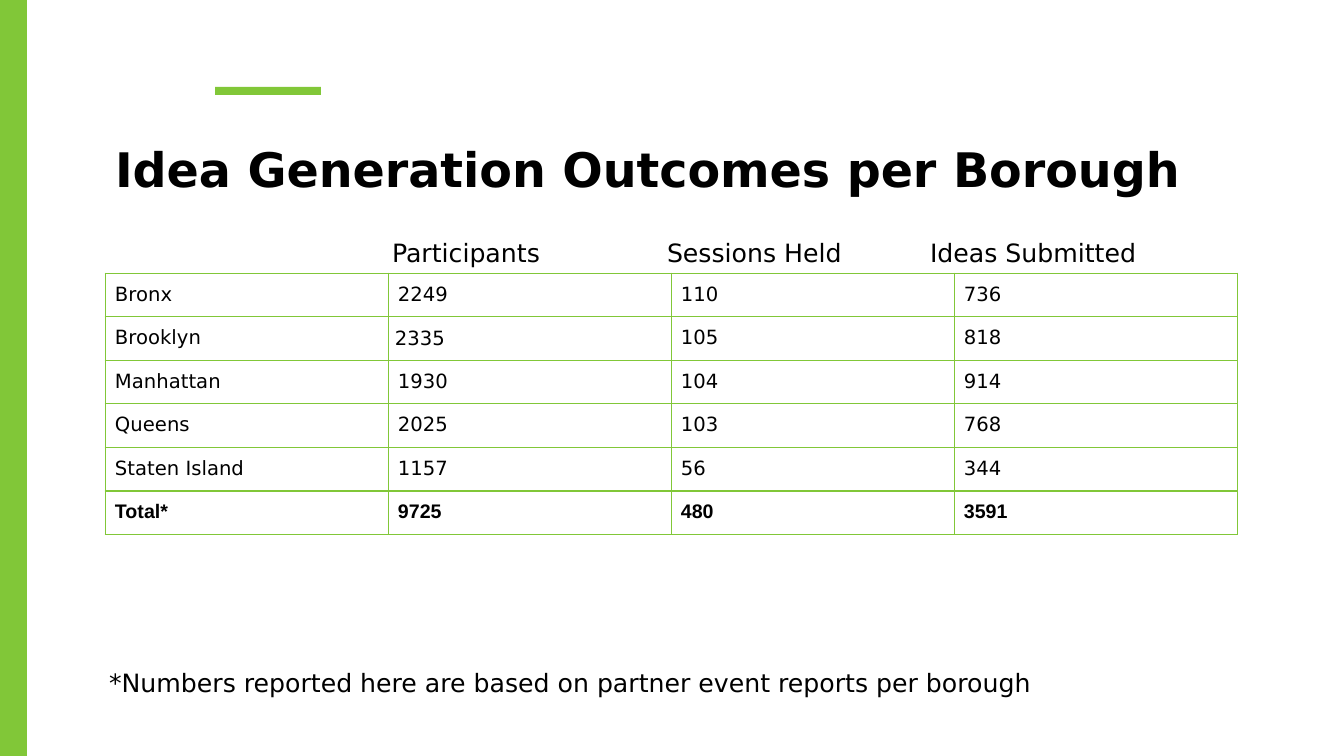
from dataclasses import dataclass

from lxml.etree import SubElement
from pptx import Presentation
from pptx.dml.color import RGBColor
from pptx.enum.shapes import MSO_SHAPE
from pptx.enum.text import MSO_ANCHOR
from pptx.oxml.ns import qn
from pptx.util import Pt

TITLE = "Idea Generation Outcomes per Borough"
HEADINGS = ["Participants", "Sessions Held", "Ideas Submitted"]
BOROUGHS = [
    ("Bronx", 2249, 110, 736),
    ("Brooklyn", 2335, 105, 818),
    ("Manhattan", 1930, 104, 914),
    ("Queens", 2025, 103, 768),
    ("Staten Island", 1157, 56, 344),
]
TOTALS = [("Total*", 9725, 480, 3591)]
FOOTNOTE = "*Numbers reported here are based on partner event reports per borough"


@dataclass(frozen=True)
class Theme:
    green: RGBColor = RGBColor(0x81, 0xC7, 0x38)
    black: RGBColor = RGBColor(0, 0, 0)
    font: str = "DejaVu Sans"
    total_font: str = "Arial"
    title_size: int = 34
    label_size: int = 18
    cell_size: int = 14
    border: float = 0.75


THEME = Theme()
PX_PER_INCH = 100.8
INSET = 10
TABLE_LEFT, COLUMN_WIDTH = 105, 283
HEADING_STOPS = [275, 538]


def px(length):
    return round(length * 914400 / PX_PER_INCH)


def set_margins(holder, left=INSET, top=INSET):
    holder.margin_left, holder.margin_right = px(left), px(INSET)
    holder.margin_top, holder.margin_bottom = px(top), px(INSET)


def add_run(paragraph, text, size, font=THEME.font, bold=False):
    run = paragraph.add_run()
    run.text = text
    run.font.size, run.font.name, run.font.bold = Pt(size), font, bold
    run.font.color.rgb = THEME.black


def add_bar(slide, *box):
    bar = slide.shapes.add_shape(MSO_SHAPE.RECTANGLE, *map(px, box))
    bar.shadow.inherit = False
    bar.fill.solid()
    bar.fill.fore_color.rgb = THEME.green
    bar.line.fill.background()


def add_label(slide, box, text, size, top=INSET, bold=False):
    frame = slide.shapes.add_textbox(*map(px, box)).text_frame
    frame.word_wrap = True
    set_margins(frame, top=top)
    paragraph = frame.paragraphs[0]
    add_run(paragraph, text, size, bold=bold)
    return paragraph


def add_tab_stops(paragraph, stops):
    tabs = SubElement(paragraph._p.get_or_add_pPr(), qn("a:tabLst"))
    for stop in stops:
        SubElement(tabs, qn("a:tab"), pos=str(px(stop)), algn="l")


def outline_cell(cell):
    properties = cell._tc.get_or_add_tcPr()
    for position, side in enumerate(("a:lnL", "a:lnR", "a:lnT", "a:lnB")):
        line = properties.makeelement(qn(side), {"w": str(Pt(THEME.border))})
        fill = SubElement(line, qn("a:solidFill"))
        SubElement(fill, qn("a:srgbClr"), val=str(THEME.green))
        properties.insert(position, line)


def add_outcomes(slide, top, row_height, records, font=THEME.font, bold=False):
    columns = len(records[0])
    table = slide.shapes.add_table(
        len(records), columns, px(TABLE_LEFT), px(top),
        px(COLUMN_WIDTH * columns), px(row_height * len(records))).table
    table.first_row = table.horz_banding = False
    for column in table.columns:
        column.width = px(COLUMN_WIDTH)
    for r, record in enumerate(records):
        for c, value in enumerate(record):
            cell = table.cell(r, c)
            cell.fill.background()
            outline_cell(cell)
            set_margins(cell)
            add_run(cell.text_frame.paragraphs[0], str(value), THEME.cell_size, font, bold)
    return table


def main():
    presentation = Presentation()
    presentation.slide_width, presentation.slide_height = px(1344), px(756)
    slide = presentation.slides.add_slide(presentation.slide_layouts[6])

    add_bar(slide, 215, 87, 106, 8)
    add_bar(slide, 0, 0, 27, 756)
    title = add_label(slide, (105, 102, 1166, 121), TITLE, THEME.title_size, top=9, bold=True)
    title.line_spacing = 1.5

    boroughs = add_outcomes(slide, 273, 43, BOROUGHS)
    brooklyn_participants = boroughs.cell(1, 1)
    set_margins(brooklyn_participants, left=7, top=1)
    brooklyn_participants.vertical_anchor = MSO_ANCHOR.BOTTOM

    headings = add_label(slide, (382, 227, 857, 43), "\t".join(HEADINGS), THEME.label_size)
    add_tab_stops(headings, HEADING_STOPS)
    add_outcomes(slide, 491, 42, TOTALS, THEME.total_font, bold=True)
    add_label(slide, (99, 657, 1012, 57), FOOTNOTE, THEME.label_size)

    presentation.save("out.pptx")


if __name__ == "__main__":
    main()
